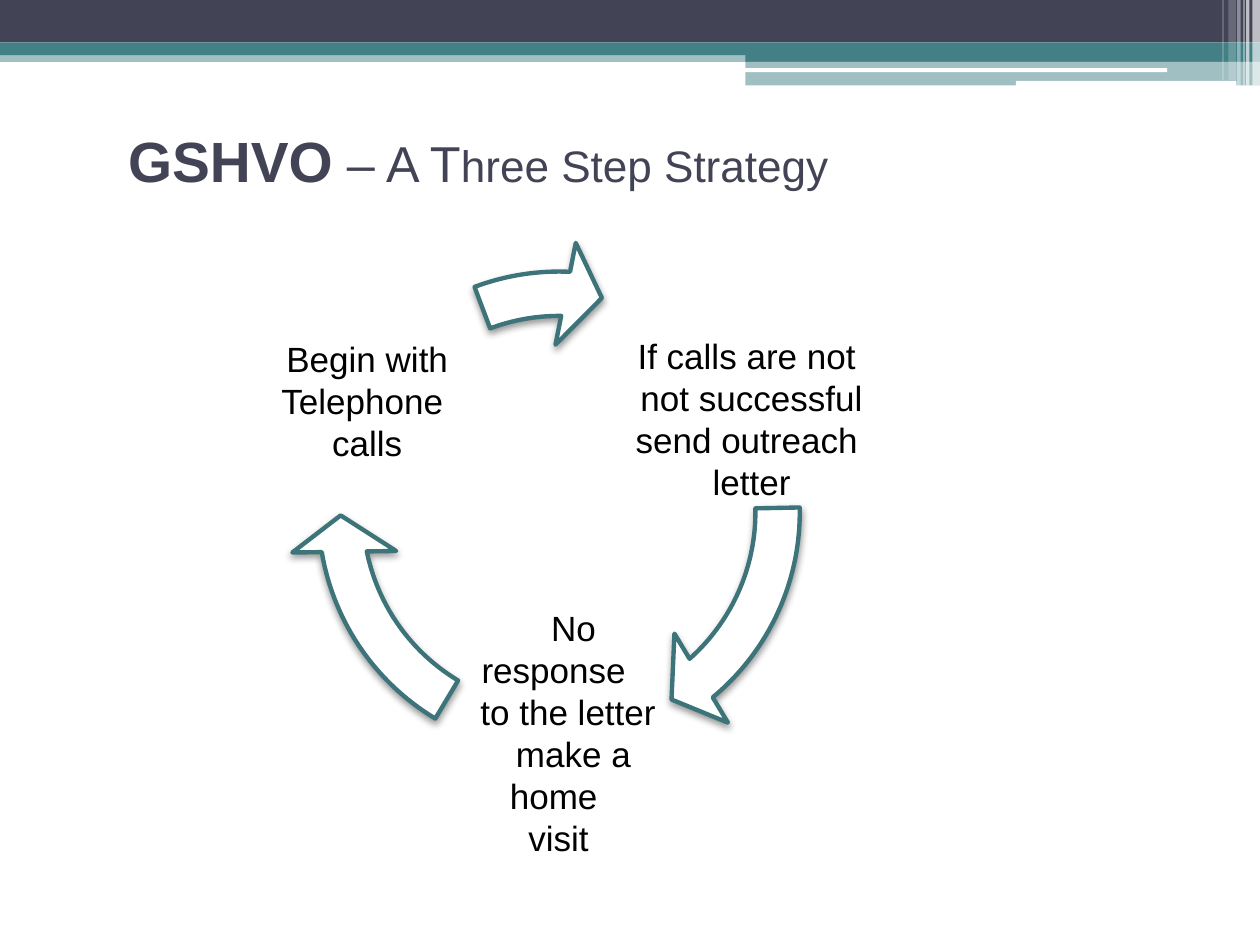
"""Build the three step strategy slide."""
from lxml import etree
from pptx import Presentation
from pptx.dml import color
from pptx.enum import shapes, text
from pptx.oxml import ns
from pptx.util import Pt

RGB = color.RGBColor
NAVY = RGB(0x42, 0x44, 0x56)
TEAL = RGB(0x43, 0x80, 0x86)
EDGE = RGB(0x3D, 0x74, 0x7A)
WHITE = RGB(0xFF, 0xFF, 0xFF)
BLACK = RGB(0, 0, 0)
KIND = shapes.MSO_SHAPE

BARS = [
    (KIND.RECTANGLE, (0, 28.8, 720, 6.6), TEAL, 50),
    (KIND.RECTANGLE, (0, 0, 720, 24.3), NAVY, 100),
    (KIND.RECTANGLE, (0, 24.3, 720, 7.2), TEAL, 100),
    (KIND.RECTANGLE, (426, 28, 294, 7.2), TEAL, 100),
    (KIND.RECTANGLE, (426, 34.8, 294, 14), TEAL, 50),
    (KIND.ROUNDED_RECTANGLE, (425.5, 39, 241.5, 2.2), WHITE, 100),
    (KIND.ROUNDED_RECTANGLE, (580.5, 46.2, 126, 2.8), WHITE, 100),
]
# left, width, height, opacity
STRIPES = [
    (715.7, 4.3, 49, 65), (712, 2, 49, 65), (710.5, 0.7, 49, 60),
    (707, 2, 49, 40), (702, 4.3, 46, 20), (698.5, 0.7, 46, 30),
]
RING = (165, 138.2, 309, 309)
# box, top inset, lines with first-line indent, arrow end and start
STEPS = [
    ((309, 167.8, 241, 121.7), 22,
     [("If calls are not ", 0), ("not successful", 0),
      ("send outreach ", 0), ("letter", 0)], (29.66, 215.33)),
    ((254, 353.5, 130.3, 130.3), 1.5,
     [("No response ", 17), ("to the letter", 11),
      ("make a home ", 17), ("visit", 0)], (101.74, 72.58)),
    ((144.7, 163.4, 130.3, 130.3), 2,
     [("Begin with", 0), ("Telephone ", 0), ("calls", 0)], (163.02, 149.65)),
]


def pts(box):
    """Turn a box of numbers into lengths."""
    return [Pt(n) for n in box]


def style(par, tint, size=None):
    """Set the font of a paragraph and its runs."""
    for font in (par.font, *(run.font for run in par.runs)):
        font.name = "Arial"
        font.color.rgb = tint
        if size:
            font.size = Pt(size)


def bar(slide, kind, box, tint, alpha):
    """Add a borderless, possibly see-through bar."""
    shape = slide.shapes.add_shape(kind, *pts(box))
    shape.shadow.inherit = False
    shape.fill.solid()
    shape.fill.fore_color.rgb = tint
    shape.line.fill.background()
    if alpha < 100:
        clr = shape.fill._xPr.find(".//" + ns.qn("a:srgbClr"))
        etree.SubElement(clr, ns.qn("a:alpha"), val=str(alpha * 1000))


def title(slide):
    """Fill the title placeholder."""
    shape = slide.shapes.title
    shape.left, shape.top, shape.width, shape.height = pts((66, 62.5, 640, 58))
    frame = shape.text_frame
    frame.vertical_anchor = text.MSO_ANCHOR.MIDDLE
    par = frame.paragraphs[0]
    par.alignment = text.PP_ALIGN.LEFT
    for words, size, bold in (("GSHVO", 32.4, True), (" – A T", 28.8, False),
                              ("hree Step Strategy", 25.2, False)):
        run = par.add_run()
        run.text = words
        run.font.size, run.font.bold = Pt(size), bold
    style(par, NAVY)


def label(slide, box, top, lines):
    """Add the centred text of one step."""
    frame = slide.shapes.add_textbox(*pts(box)).text_frame
    frame.word_wrap = True
    frame.vertical_anchor = text.MSO_ANCHOR.MIDDLE
    frame.margin_left = frame.margin_right = frame.margin_bottom = Pt(1.5)
    frame.margin_top = Pt(top)
    for i, (words, dent) in enumerate(lines):
        par = frame.add_paragraph() if i else frame.paragraphs[0]
        par.text = words
        par.alignment = text.PP_ALIGN.CENTER
        if dent:
            par._p.get_or_add_pPr().set("indent", str(Pt(dent)))
        style(par, BLACK, 20)


def arrow(slide, end, start):
    """Add one curved arrow of the ring."""
    shape = slide.shapes.add_shape(KIND.CIRCULAR_ARROW, *pts(RING))
    for i, n in enumerate((0.082, 5.756, end, start, 0.096)):
        shape.adjustments[i] = n
    shape.fill.solid()
    shape.fill.fore_color.rgb = WHITE
    shape.line.color.rgb = EDGE
    shape.line.width = Pt(2.5)
    shape.shadow.inherit = False
    fx = shape._element.spPr.find(ns.qn("a:effectLst"))
    cast = etree.SubElement(fx, ns.qn("a:outerShdw"), blurRad=str(Pt(4.1)),
                            dist=str(Pt(2)), dir="5400000", rotWithShape="0")
    clr = etree.SubElement(cast, ns.qn("a:srgbClr"), val=str(BLACK))
    etree.SubElement(clr, ns.qn("a:alpha"), val="40000")


def main():
    """Build and save the slide."""
    deck = Presentation()
    deck.slide_width, deck.slide_height = Pt(720), Pt(540)
    slide = deck.slides.add_slide(deck.slide_layouts[5])
    for kind, box, tint, alpha in BARS:
        bar(slide, kind, box, tint, alpha)
    for left, width, height, alpha in STRIPES:
        bar(slide, KIND.RECTANGLE, (left, 0, width, height), WHITE, alpha)
    title(slide)
    for box, top, lines, sweep in STEPS:
        label(slide, box, top, lines)
        arrow(slide, *sweep)
    deck.save("out.pptx")


if __name__ == "__main__":
    main()
